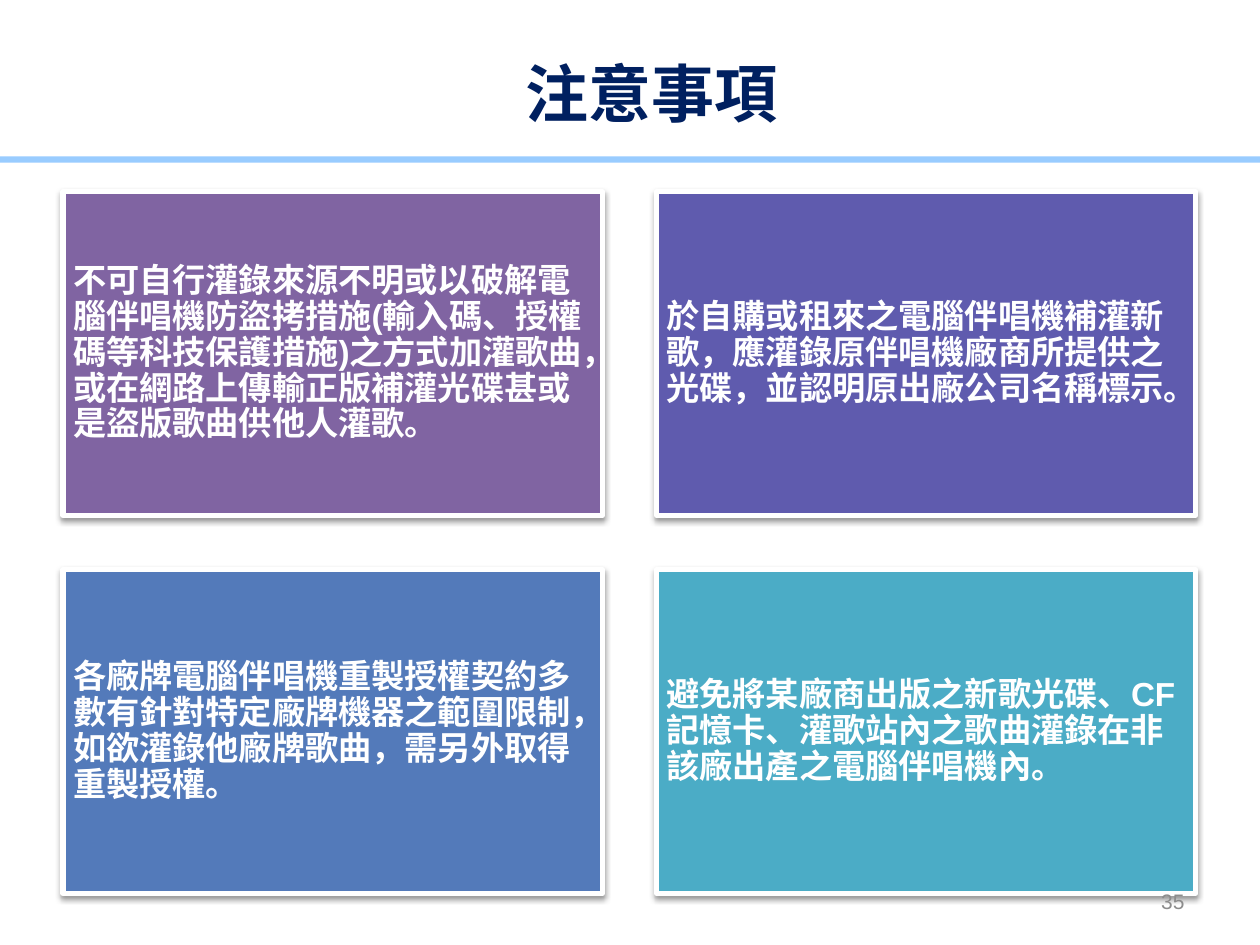
from dataclasses import dataclass

from lxml import etree
from pptx import Presentation
from pptx.dml.color import RGBColor
from pptx.enum.shapes import MSO_SHAPE
from pptx.enum.text import MSO_ANCHOR, PP_ALIGN
from pptx.oxml.ns import qn
from pptx.util import Inches, Pt

RECT = MSO_SHAPE.RECTANGLE
MIDDLE = MSO_ANCHOR.MIDDLE
LEFT, CENTER, RIGHT = PP_ALIGN.LEFT, PP_ALIGN.CENTER, PP_ALIGN.RIGHT


@dataclass(frozen=True)
class Theme:
    latin: str = "Arial"
    asian: str = "Noto Sans CJK SC"
    title: str = "002060"
    band: str = "99CCFF"
    white: str = "FFFFFF"
    gray: str = "8C8C8C"
    title_size: float = 36
    body_size: float = 19
    page_size: float = 12
    edge: float = 3


THEME = Theme()

CARDS = [
    ("8064A2", "不可自行灌錄來源不明或以破解電腦伴唱機防盜拷措施(輸入碼、授權碼等科技保護措施)之方式加灌歌曲，或在網路上傳輸正版補灌光碟甚或是盜版歌曲供他人灌歌。"),
    ("5F5BAE", "於自購或租來之電腦伴唱機補灌新歌，應灌錄原伴唱機廠商所提供之光碟，並認明原出廠公司名稱標示。"),
    ("537ABA", "各廠牌電腦伴唱機重製授權契約多數有針對特定廠牌機器之範圍限制，如欲灌錄他廠牌歌曲，需另外取得重製授權。"),
    ("4BACC6", "避免將某廠商出版之新歌光碟、CF記憶卡、灌歌站內之歌曲灌錄在非該廠出產之電腦伴唱機內。"),
]


def write(frame, text, size, color, align, bold=True, latin=THEME.latin):
    frame.word_wrap = True
    frame.vertical_anchor = MIDDLE
    para = frame.paragraphs[0]
    para.alignment = align
    run = para.add_run()
    run.text = text
    font = run.font
    font.size, font.bold, font.name = Pt(size), bold, latin
    font.color.rgb = RGBColor.from_string(color)
    asian = etree.SubElement(font._element, qn("a:ea"))
    asian.set("typeface", THEME.asian)
    return para


def add_rect(slide, box, fill):
    shape = slide.shapes.add_shape(RECT, *box)
    shape.shadow.inherit = False
    shape.fill.solid()
    shape.fill.fore_color.rgb = RGBColor.from_string(fill)
    shape.line.fill.background()
    return shape


def cast_shadow(shape):
    """Drop a soft black shadow straight below the shape."""
    effects = shape._element.spPr.find(qn("a:effectLst"))
    outer = etree.SubElement(
        effects, qn("a:outerShdw"), blurRad=str(Pt(3.1)),
        dist=str(Pt(1.6)), dir="5400000", rotWithShape="0")
    black = etree.SubElement(outer, qn("a:srgbClr"), val="000000")
    etree.SubElement(black, qn("a:alpha"), val="38000")


def add_title(slide, box, text):
    title = slide.shapes.title
    title.left, title.top, title.width, title.height = box
    write(title.text_frame, text, THEME.title_size, THEME.title, CENTER,
          latin=THEME.asian)


def add_card(slide, box, fill, text):
    card = add_rect(slide, box, fill)
    card.line.color.rgb = RGBColor.from_string(THEME.white)
    card.line.width = Pt(THEME.edge)
    cast_shadow(card)
    frame = card.text_frame
    frame.margin_left = frame.margin_right = Inches(0.08)
    frame.margin_top = frame.margin_bottom = Inches(0.08)
    para = write(frame, text, THEME.body_size, THEME.white, LEFT)
    para.line_spacing = 0.9


def add_grid(slide, box, cards, cols=2, gap=Inches(0.43)):
    """Lay the cards out row by row with equal gaps."""
    left, top, width, height = box
    rows = len(cards) // cols
    wide = (width - gap * (cols - 1)) // cols
    high = (height - gap * (rows - 1)) // rows
    for i, (fill, text) in enumerate(cards):
        row, col = divmod(i, cols)
        place = (left + col * (wide + gap), top + row * (high + gap), wide, high)
        add_card(slide, place, fill, text)


def add_page(slide, box, text):
    label = slide.shapes.add_textbox(*box)
    write(label.text_frame, text, THEME.page_size, THEME.gray, RIGHT, bold=False)


def inches(*sizes):
    return tuple(Inches(size) for size in sizes)


def main():
    deck = Presentation()
    deck.slide_width, deck.slide_height = inches(10, 7.5)
    slide = deck.slides.add_slide(deck.slide_layouts[5])
    add_rect(slide, inches(-0.04, 1.24, 10.06, 0.05), THEME.band)
    add_title(slide, inches(0.67, 0.21, 9, 1.04), "注意事項")
    add_grid(slide, inches(0.5, 1.52, 8.99, 5.57), CARDS)
    add_page(slide, inches(7.17, 6.95, 2.33, 0.4), "35")
    deck.save("out.pptx")


if __name__ == "__main__":
    main()
